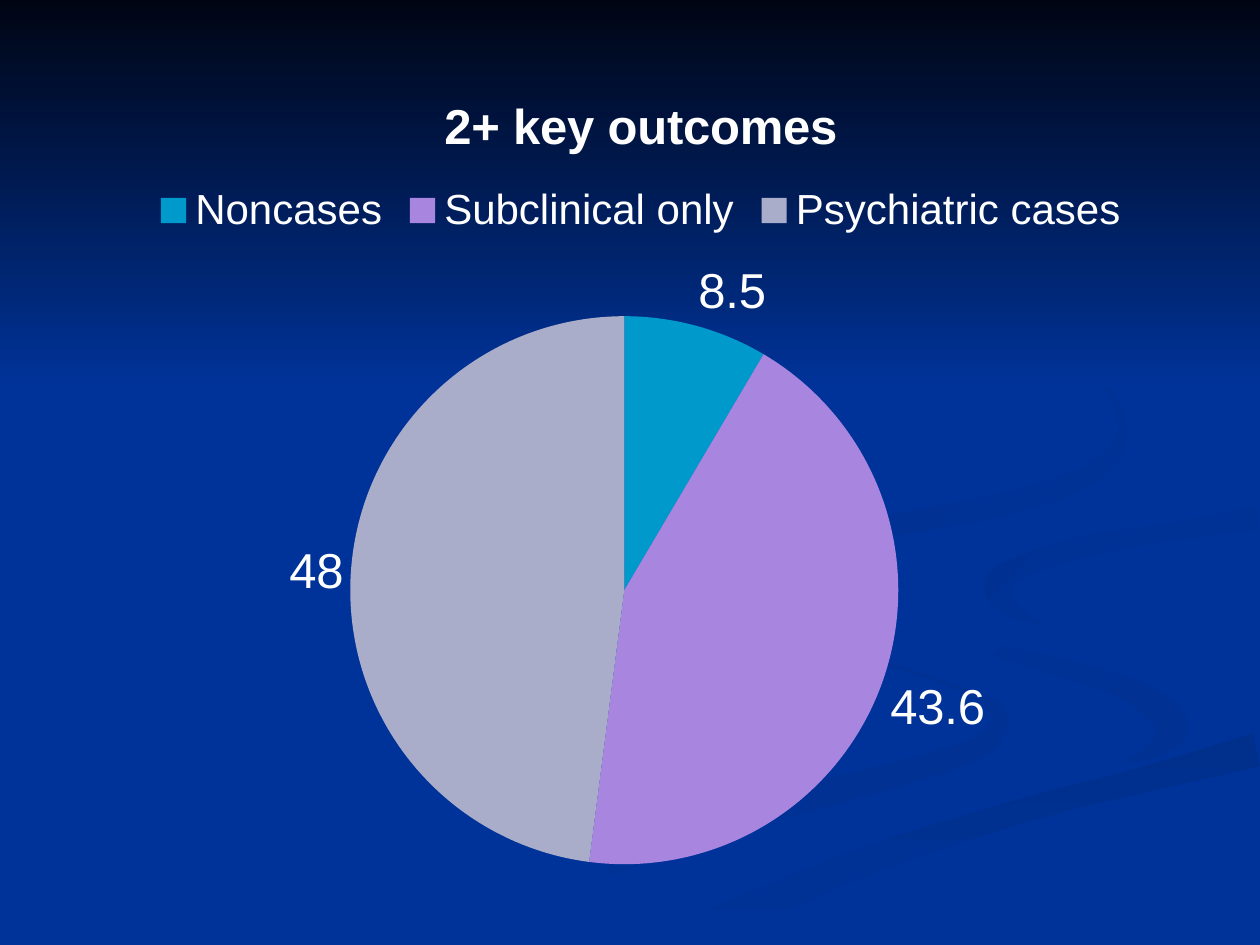
import math

import pptx
import pptx.chart.data
import pptx.dml.color
import pptx.enum.chart
import pptx.enum.shapes
import pptx.oxml
import pptx.util
from pptx.util import Inches

SLIDE_W, SLIDE_H = 10, 7.5
BLUE, NIGHT, WHITE = "003399", "000514", "FFFFFF"
SHADE = "003193"
STEPS_PER_KNOT = 6

BROAD_RIBBON = [(9.99, 3.95, 0.15), (9.2, 4.1, 0.18), (8.4, 4.22, 0.14), (7.8, 4.4, 0.25),
                (7.53, 4.62, 0.55), (7.85, 4.95, 0.3), (8.6, 5.18, 0.25), (9.4, 5.45, 0.35),
                (9.7, 5.65, 0.5), (9.2, 6, 0.2), (8.3, 6.25, 0.1), (7, 6.6, 0.2),
                (6, 6.97, 0.15), (4.9, 7.49, 0.15)]
LEFT_SWIRL = [(5.72, 4.62, 0.02), (5.79, 4.76, 0.05), (6.2, 5.01, 0.05), (6.8, 5.19, 0.03),
              (7.5, 5.42, 0.03), (7.85, 5.58, 0.08), (7.93, 5.75, 0.14), (7.73, 5.95, 0.17),
              (7.1, 6.15, 0.2), (6, 6.44, 0.24), (4.6, 6.88, 0.3), (3.3, 7.49, 0.35)]
MIDDLE_SWIRL = [(7.24, 4.64, 0.01), (7.42, 4.92, 0.07), (7.85, 5.14, 0.1), (8.35, 5.28, 0.14),
                (8.95, 5.47, 0.18), (9.3, 5.73, 0.25), (9.2, 5.92, 0.15), (8.94, 6.05, 0.01)]
LOWER_SWEEP = [(5.37, 7.49, 0.3), (6, 7.2, 0.25), (6.96, 6.8, 0.21), (8.2, 6.41, 0.19),
               (9.03, 6.2, 0.2), (9.98, 5.95, 0.27)]
RIGHT_SWIRL = [(8.26, 4.96, 0.01), (7.98, 4.8, 0.14), (7.93, 4.64, 0.24), (8.1, 4.5, 0.17),
               (8.6, 4.34, 0.16), (9.3, 4.22, 0.14), (9.98, 4.11, 0.18)]
UPPER_SWIRL = [(7.62, 2.33, 0.01), (8.3, 2.67, 0.03), (8.75, 3.03, 0.04), (8.91, 3.38, 0.06),
               (8.8, 3.64, 0.13), (8.5, 3.84, 0.16), (7.8, 4.04, 0.18), (6.8, 4.22, 0.16),
               (6.1, 4.41, 0.17), (5.85, 4.62, 0.16), (5.95, 4.83, 0.1), (6.22, 5, 0.01)]

RIBBONS = [
    (BROAD_RIBBON, [BLUE], 0),
    (LEFT_SWIRL, [BLUE, SHADE], 0),
    (MIDDLE_SWIRL, [BLUE, SHADE], 45),
    (LOWER_SWEEP, ["002F8C", BLUE], 90),
    (RIGHT_SWIRL, ["003091", BLUE], 45),
    (UPPER_SWIRL, ["002F8E", BLUE], 45),
]
SLICES = [("Noncases", 8.5, "0099CC"),
          ("Subclinical only", 43.6, "A886E0"),
          ("Psychiatric cases", 48, "AAADCA")]


def rgb(value):
    return pptx.dml.color.RGBColor.from_string(value)


def catmull_rom(a, b, c, d, t):
    return (2 * b + (c - a) * t + (2 * a - 5 * b + 4 * c - d) * t ** 2
            + (3 * b - a - 3 * c + d) * t ** 3) / 2


def smooth(knots):
    padded = [knots[0], *knots, knots[-1]]
    curve = []
    for window in zip(padded, padded[1:], padded[2:], padded[3:]):
        for step in range(STEPS_PER_KNOT):
            t = step / STEPS_PER_KNOT
            curve.append(tuple(catmull_rom(*values, t) for values in zip(*window)))
    return curve + [knots[-1]]


def ribbon_outline(knots):
    curve = smooth(knots)
    near_side, far_side = [], []
    for i, (x, y, width) in enumerate(curve):
        before, after = curve[max(i - 1, 0)], curve[min(i + 1, len(curve) - 1)]
        dx, dy = after[0] - before[0], after[1] - before[1]
        scale = width / 2 / math.hypot(dx, dy)
        near_side.append((x - dy * scale, y + dx * scale))
        far_side.append((x + dy * scale, y - dx * scale))
    return [(min(x, SLIDE_W), min(y, SLIDE_H)) for x, y in near_side + far_side[::-1]]


class SlideBuilder:
    def __init__(self, prs, background):
        self.s = prs.slides.add_slide(prs.slide_layouts[6])
        self.s.background.fill.solid()
        self.s.background.fill.fore_color.rgb = rgb(background)

    def paint(self, sp, colors, angle):
        sp.shadow.inherit = False
        sp.line.fill.background()
        if len(colors) == 1:
            sp.fill.solid()
            sp.fill.fore_color.rgb = rgb(colors[0])
            return
        sp.fill.gradient()
        sp.fill.gradient_angle = -angle % 360
        for stop, color in zip(sp.fill.gradient_stops, colors):
            stop.color.rgb = rgb(color)

    def ribbon(self, knots, colors, angle):
        start, *rest = [(Inches(x), Inches(y)) for x, y in ribbon_outline(knots)]
        builder = self.s.shapes.build_freeform(*start)
        builder.add_line_segments(rest)
        self.paint(builder.convert_to_shape(), colors, angle)

    def band(self, x, y, w, h, colors, angle):
        sp = self.s.shapes.add_shape(pptx.enum.shapes.MSO_SHAPE.RECTANGLE,
                                     Inches(x), Inches(y), Inches(w), Inches(h))
        self.paint(sp, colors, angle)

    def font(self, font, size, name="Arial", bold=False):
        font.size = pptx.util.Pt(size)
        font.name = name
        font.bold = bold
        font.color.rgb = rgb(WHITE)

    def pie(self, x, y, w, h, title, slices, plot):
        data = pptx.chart.data.CategoryChartData()
        data.categories = [name for name, _, _ in slices]
        data.add_series("Series 1", [value for _, value, _ in slices])
        chart = self.s.shapes.add_chart(pptx.enum.chart.XL_CHART_TYPE.PIE, Inches(x), Inches(y),
                                        Inches(w), Inches(h), data).chart
        self.font(chart.font, 18, "Times New Roman")
        chart.has_title = True
        p = chart.chart_title.text_frame.paragraphs[0]
        p.text = title
        self.font(p.font, 28, bold=True)
        chart.has_legend = True
        chart.legend.position = pptx.enum.chart.XL_LEGEND_POSITION.TOP
        chart.legend.include_in_layout = False
        self.font(chart.legend.font, 24)
        pie = chart.plots[0]
        pie.vary_by_categories = True
        for i, (_, _, color) in enumerate(slices):
            point = pie.series[0].points[i]
            point.format.fill.solid()
            point.format.fill.fore_color.rgb = rgb(color)
            point.format.line.fill.background()
        labels = pie.series[0].data_labels
        labels.show_value = True
        labels.position = pptx.enum.chart.XL_LABEL_POSITION.OUTSIDE_END
        self.font(labels.font, 28)
        self.place_plot(chart, plot)

    def place_plot(self, chart, plot):
        area = chart.element.xpath("c:chart/c:plotArea")[0]
        for old in area.xpath("c:layout"):
            area.remove(old)
        sizes = "".join(f'<c:{tag} val="{value}"/>' for tag, value in zip("xywh", plot))
        area.insert(0, pptx.oxml.parse_xml(
            '<c:layout xmlns:c="http://schemas.openxmlformats.org/drawingml/2006/chart">'
            '<c:manualLayout><c:layoutTarget val="inner"/><c:xMode val="edge"/>'
            f'<c:yMode val="edge"/>{sizes}</c:manualLayout></c:layout>'))


def main():
    prs = pptx.Presentation()
    prs.slide_width, prs.slide_height = Inches(SLIDE_W), Inches(SLIDE_H)
    slide = SlideBuilder(prs, BLUE)
    for knots, colors, angle in RIBBONS:
        slide.ribbon(knots, colors, angle)
    slide.band(0, 0, SLIDE_W, 3.08, [NIGHT, BLUE], 90)
    x, y, w, h = 0.17, 0.5, 9.83, 6.5
    plot_x, plot_y, diameter = 2.78, 2.51, 4.35
    slide.pie(x, y, w, h, "2+ key outcomes", SLICES,
              [(plot_x - x) / w, (plot_y - y) / h, diameter / w, diameter / h])
    prs.save("out.pptx")


if __name__ == "__main__":
    main()
